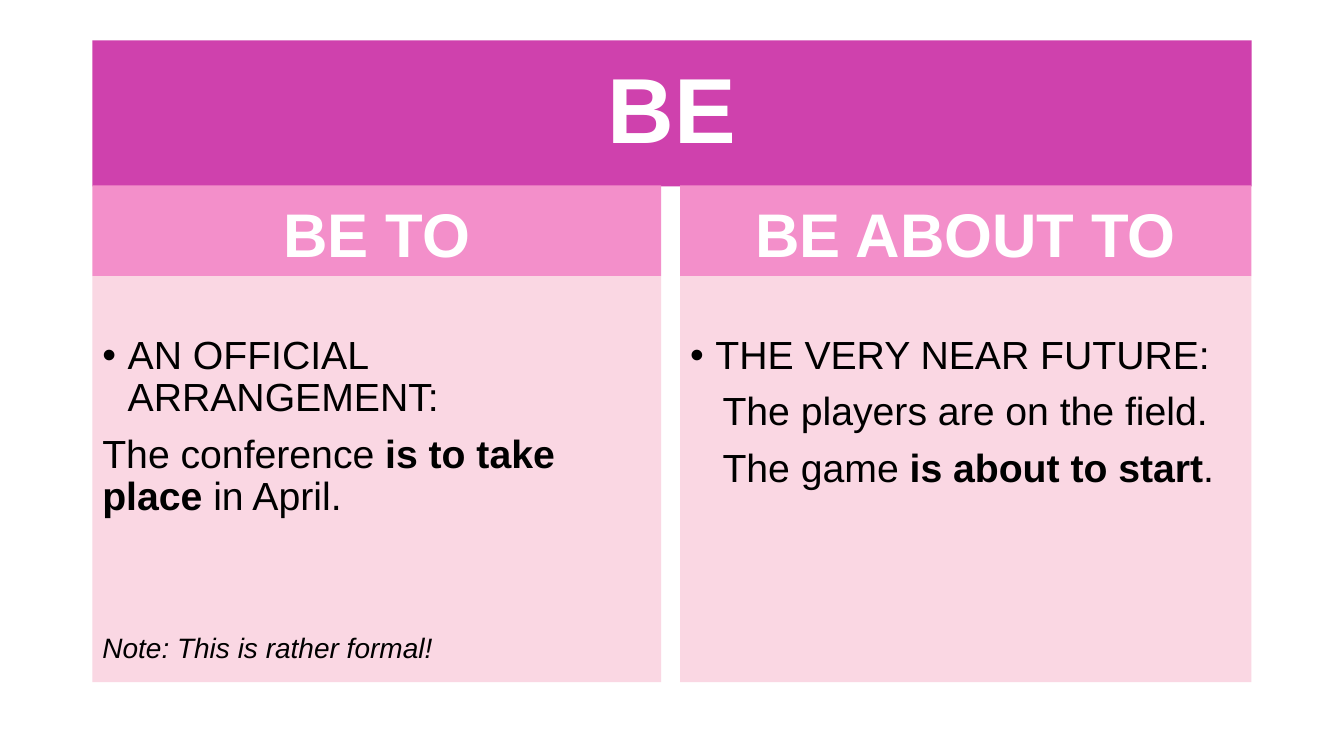
"""Build a grammar slide comparing BE TO with BE ABOUT TO."""
from dataclasses import dataclass

from lxml.etree import SubElement
from pptx import Presentation
from pptx.dml.color import RGBColor
from pptx.enum.shapes import MSO_SHAPE
from pptx.enum.text import MSO_ANCHOR, PP_ALIGN
from pptx.oxml.ns import qn
from pptx.util import Cm, Pt

FONT = "Arial"
WHITE, BLACK = "FFFFFF", "000000"
MAGENTA, PINK, BLUSH = "CF41AD", "F38FCA", "FAD7E3"

LEFT, RIGHT = 2.33, 31.54
TITLE_TOP, TITLE_HEIGHT = 1.02, 3.68
HEADING_TOP, HEADING_HEIGHT = 4.67, 2.29
BODY_TOP, BODY_HEIGHT = HEADING_TOP + HEADING_HEIGHT, 10.23
BODY_INSET = 1.5
BULLET_INDENT = 0.64


@dataclass
class Span:
    text: str
    bold: bool = False
    italic: bool = False


@dataclass
class Line:
    spans: list[Span]
    size: float = 28
    before: float = 10
    indent: float = 0
    bullet: bool = False


@dataclass
class Column:
    left: float
    width: float
    heading: str
    lines: list[Line]


COLUMNS = [
    Column(LEFT, 14.33, "BE TO", [
        Line([Span("AN OFFICIAL ARRANGEMENT:")], before=0, indent=BULLET_INDENT, bullet=True),
        Line([Span("The conference "), Span("is to take place ", bold=True), Span("in April.")]),
        Line([Span("Note: This is rather formal!", italic=True)], size=20, before=82),
    ]),
    Column(17.14, RIGHT - 17.14, "BE ABOUT TO", [
        Line([Span("THE VERY NEAR FUTURE:")], before=0, indent=BULLET_INDENT, bullet=True),
        Line([Span("The players are on the field.")], indent=0.82),
        Line([Span("The game "), Span("is about to start", bold=True), Span(".")], indent=0.82),
    ]),
]


def rgb(color: str) -> RGBColor:
    return RGBColor.from_string(color)


def add_panel(slide, left: float, top: float, width: float, height: float, color: str):
    panel = slide.shapes.add_shape(
        MSO_SHAPE.RECTANGLE, Cm(left), Cm(top), Cm(width), Cm(height))
    panel.shadow.inherit = False
    panel.fill.solid()
    panel.fill.fore_color.rgb = rgb(color)
    panel.line.fill.background()
    panel.text_frame.word_wrap = True
    return panel


def set_font(font, size: float, color: str, bold: bool = False, italic: bool = False) -> None:
    font.name, font.size = FONT, Pt(size)
    font.bold, font.italic = bold, italic
    font.color.rgb = rgb(color)


def write_heading(frame, text: str, size: float, anchor: MSO_ANCHOR) -> None:
    frame.text = text
    frame.vertical_anchor = anchor
    paragraph = frame.paragraphs[0]
    paragraph.alignment = PP_ALIGN.CENTER
    paragraph.line_spacing = 0.9
    set_font(paragraph.runs[0].font, size, WHITE, bold=True)


def write_line(paragraph, line: Line) -> None:
    paragraph.alignment = PP_ALIGN.LEFT
    paragraph.line_spacing = 0.9
    paragraph.space_before = Pt(line.before)
    properties = paragraph._p.get_or_add_pPr()
    properties.set("marL", str(Cm(line.indent)))
    properties.set("indent", str(-Cm(line.indent) if line.bullet else 0))
    if line.bullet:
        SubElement(properties, qn("a:buFont"), typeface=FONT)
        SubElement(properties, qn("a:buChar"), char="•")
    for span in line.spans:
        run = paragraph.add_run()
        run.text = span.text
        set_font(run.font, line.size, BLACK, span.bold, span.italic)


def add_column(slide, column: Column) -> None:
    heading = add_panel(slide, column.left, HEADING_TOP, column.width, HEADING_HEIGHT, PINK)
    write_heading(heading.text_frame, column.heading, 44, MSO_ANCHOR.BOTTOM)
    body = add_panel(slide, column.left, BODY_TOP, column.width, BODY_HEIGHT, BLUSH)
    frame = body.text_frame
    frame.vertical_anchor = MSO_ANCHOR.TOP
    frame.margin_top = Cm(BODY_INSET)
    for index, line in enumerate(column.lines):
        write_line(frame.add_paragraph() if index else frame.paragraphs[0], line)


def main() -> None:
    deck = Presentation()
    deck.slide_width, deck.slide_height = Cm(33.87), Cm(19.05)
    slide = deck.slides.add_slide(deck.slide_layouts[5])
    title = slide.shapes.title
    title.left, title.top = Cm(LEFT), Cm(TITLE_TOP)
    title.width, title.height = Cm(RIGHT - LEFT), Cm(TITLE_HEIGHT)
    title.fill.solid()
    title.fill.fore_color.rgb = rgb(MAGENTA)
    write_heading(title.text_frame, "BE", 66, MSO_ANCHOR.MIDDLE)
    for column in COLUMNS:
        add_column(slide, column)
    deck.save("out.pptx")


if __name__ == "__main__":
    main()
